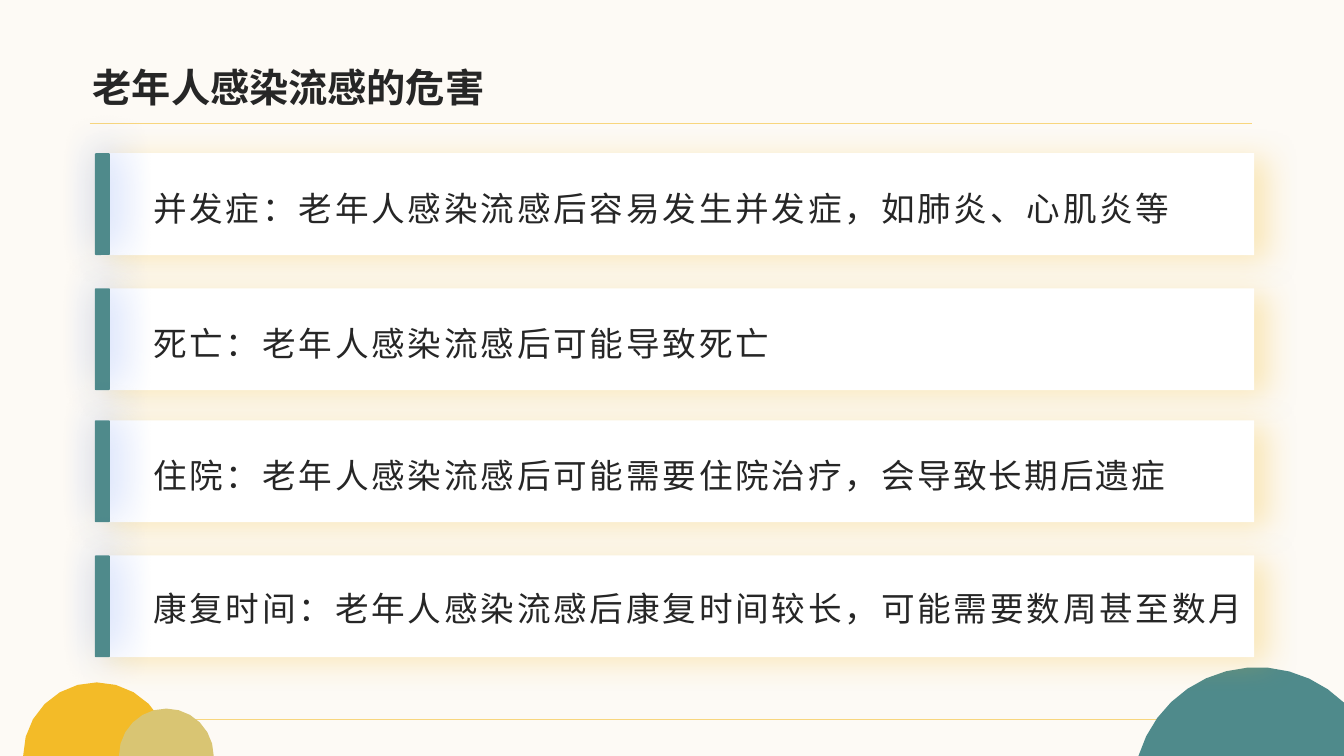
"""Build the slide on the harms of influenza in older people."""
from dataclasses import dataclass
from math import asin, cos, pi, sin

from lxml.etree import SubElement
from pptx import Presentation
from pptx.dml.color import RGBColor
from pptx.enum.shapes import MSO_CONNECTOR, MSO_SHAPE
from pptx.enum.text import MSO_ANCHOR, MSO_AUTO_SIZE, PP_ALIGN
from pptx.oxml.ns import qn
from pptx.util import Inches, Pt

WIDTH, HEIGHT = 13.33, 7.5
CREAM = RGBColor(0xFD, 0xFA, 0xF5)
WHITE = RGBColor(0xFF, 0xFF, 0xFF)
INK = RGBColor(0x26, 0x26, 0x26)
TEAL = RGBColor(0x4F, 0x8A, 0x8B)
AMBER = RGBColor(0xF3, 0xBB, 0x28)
SAND = RGBColor(0xD9, 0xC5, 0x73)
RULE = RGBColor(0xF8, 0xD6, 0x7E)
BLUE = RGBColor(0x45, 0x75, 0xF0)
CJK_FONT = "Noto Sans CJK SC"

CARD_LEFT, CARD_WIDTH, CARD_HEIGHT = 0.94, 11.5, 1.01
BAR_WIDTH = 0.15
TEXT_LEFT = 1.42
ARC_STEPS = 12


@dataclass(frozen=True)
class Shadow:
    color: RGBColor
    opacity: int
    blur: float
    distance: float
    angle: int


@dataclass(frozen=True)
class Dome:
    center_x: float
    center_y: float
    radius: float
    color: RGBColor


@dataclass(frozen=True)
class Harm:
    top: float
    pieces: tuple[tuple[str, float], ...]
    text_width: float = 11.01
    right_inset: float = 0
    line_spacing: float = 1.2


CARD_SHADOW = Shadow(AMBER, 30, 22, 9, 17)
BAR_SHADOW = Shadow(BLUE, 45, 30, 5, 315)
YELLOW_DOME = Dome(0.96, 7.5, 0.73, AMBER)
SAND_DOME = Dome(1.65, 7.5, 0.47, SAND)
TEAL_DOME = Dome(12.47, 7.85, 1.23, TEAL)
HARMS = (
    Harm(1.52, (("并发症：老年人感染流感后容易发生并发症，如肺炎、心肌炎等", 2),)),
    Harm(2.86, (("死亡：老年人感染流感后可能导致死亡", 2),), right_inset=0.1),
    Harm(4.17, (("住院：老年人感染流感后可能需要住院治疗，", 2), ("会导致长期后遗症", 1.5))),
    Harm(5.51, (("康复时间：老年人感染流感后康复时间较长，可能需要数周甚至数月", 2),),
         text_width=11.11, right_inset=0.1, line_spacing=1.1),
)


def add_rule(page, left: float, right: float, top: float) -> None:
    line = page.shapes.add_connector(
        MSO_CONNECTOR.STRAIGHT, Inches(left), Inches(top), Inches(right), Inches(top))
    line.line.color.rgb = RULE
    line.line.width = Pt(0.5)
    SubElement(line._element.spPr, qn("a:effectLst"))


def add_dome(page, dome: Dome) -> None:
    start = asin((dome.center_y - HEIGHT) / dome.radius)
    end = pi - start
    if dome.center_x + dome.radius > WIDTH:
        start = pi / 2 - asin((WIDTH - dome.center_x) / dome.radius)
    angles = [end + (start - end) * step / ARC_STEPS for step in range(ARC_STEPS + 1)]
    points = [(Inches(dome.center_x + dome.radius * cos(angle)),
               Inches(dome.center_y - dome.radius * sin(angle))) for angle in angles]
    corner = (points[-1][0], Inches(HEIGHT))
    builder = page.shapes.build_freeform(*points[0])
    builder.add_line_segments(points[1:] + [corner], close=True)
    shape = builder.convert_to_shape()
    shape.fill.solid()
    shape.fill.fore_color.rgb = dome.color
    shape.line.fill.background()
    shape.shadow.inherit = False


def add_panel(page, left: float, top: float, width: float, color: RGBColor,
              rounding: float, shadow: Shadow) -> None:
    panel = page.shapes.add_shape(MSO_SHAPE.ROUNDED_RECTANGLE, Inches(left), Inches(top),
                                  Inches(width), Inches(CARD_HEIGHT))
    panel.adjustments[0] = rounding
    panel.fill.solid()
    panel.fill.fore_color.rgb = color
    panel.line.fill.background()
    panel.shadow.inherit = False
    effects = panel._element.spPr.find(qn("a:effectLst"))
    outer = SubElement(effects, qn("a:outerShdw"), blurRad=str(Pt(shadow.blur)),
                       dist=str(Pt(shadow.distance)), dir=str(shadow.angle * 60000),
                       algn="ctr", rotWithShape="0")
    tint = SubElement(outer, qn("a:srgbClr"), val=str(shadow.color))
    SubElement(tint, qn("a:alpha"), val=str(shadow.opacity * 1000))


def add_span(para, text: str, spacing: float = 0) -> None:
    span = para.add_run()
    span.text = text
    properties = span._r.get_or_add_rPr()
    properties.set("lang", "zh-CN")
    properties.set("spc", str(int(spacing * 100)))
    SubElement(properties, qn("a:ea"), typeface=CJK_FONT)


def set_font(para, name: str, size: float, bold: bool) -> None:
    para.alignment = PP_ALIGN.LEFT
    para.font.name = name
    para.font.size = Pt(size)
    para.font.bold = bold
    para.font.color.rgb = INK


def set_frame(frame, left: float, right: float, vertical: float) -> None:
    frame.word_wrap = True
    frame.auto_size = MSO_AUTO_SIZE.NONE
    frame.vertical_anchor = MSO_ANCHOR.MIDDLE
    frame.margin_left, frame.margin_right = Inches(left), Inches(right)
    frame.margin_top = frame.margin_bottom = Inches(vertical)


def add_title(page, text: str) -> None:
    title = page.shapes.title
    title.left, title.top = Inches(0.92), Inches(0.39)
    title.width, title.height = Inches(11.5), Inches(0.94)
    set_frame(title.text_frame, 0, 0, 0)
    para = title.text_frame.paragraphs[0]
    set_font(para, "Arial", 28, True)
    add_span(para, text)


def add_harm_text(page, harm: Harm) -> None:
    box = page.shapes.add_textbox(Inches(TEXT_LEFT), Inches(harm.top),
                                  Inches(harm.text_width), Inches(CARD_HEIGHT))
    set_frame(box.text_frame, 0.1, harm.right_inset, 0.05)
    para = box.text_frame.paragraphs[0]
    para.line_spacing = harm.line_spacing
    set_font(para, CJK_FONT, 24, False)
    for text, spacing in harm.pieces:
        add_span(para, text, spacing)


def main() -> None:
    deck = Presentation()
    deck.slide_width, deck.slide_height = Inches(WIDTH), Inches(HEIGHT)
    page = deck.slides.add_slide(deck.slide_layouts[5])
    page.background.fill.solid()
    page.background.fill.fore_color.rgb = CREAM

    add_title(page, "老年人感染流感的危害")
    add_rule(page, 0.89, 12.42, 1.22)
    add_dome(page, YELLOW_DOME)
    add_rule(page, 1.69, 11.55, 7.14)
    add_dome(page, SAND_DOME)
    add_dome(page, TEAL_DOME)
    for harm in HARMS:
        add_panel(page, CARD_LEFT, harm.top, CARD_WIDTH, WHITE, 0, CARD_SHADOW)
        add_panel(page, CARD_LEFT, harm.top, BAR_WIDTH, TEAL, 0.08, BAR_SHADOW)
        add_harm_text(page, harm)
    deck.save("out.pptx")


if __name__ == "__main__":
    main()
